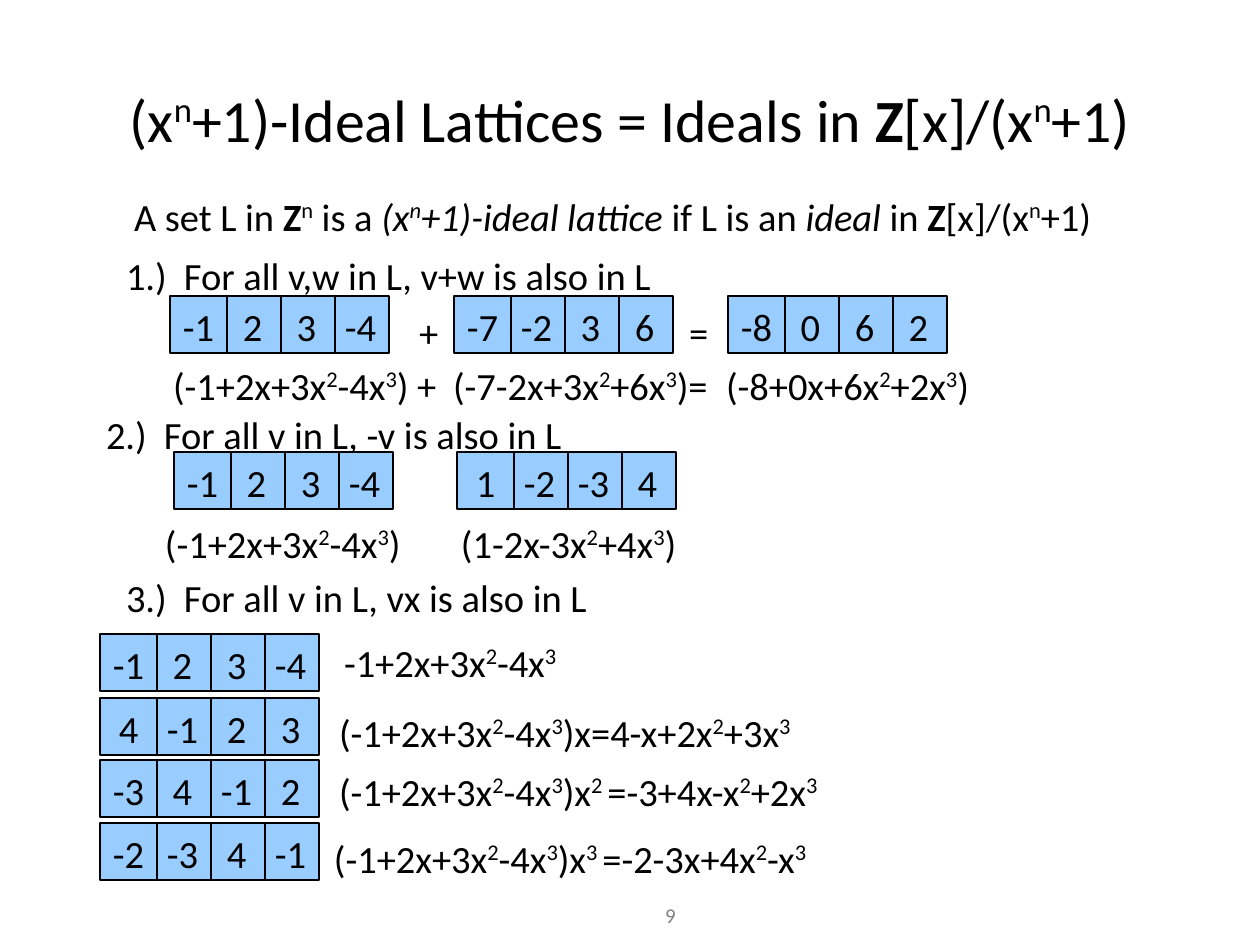
"""Builds a slide on ideal lattices as ideals in a polynomial ring."""
from dataclasses import dataclass

from lxml import etree
from pptx import Presentation
from pptx.dml.color import RGBColor
from pptx.enum.shapes import MSO_SHAPE
from pptx.enum.text import MSO_ANCHOR, PP_ALIGN
from pptx.oxml.ns import qn
from pptx.util import Emu, Pt

LEFT, CENTER = PP_ALIGN.LEFT, PP_ALIGN.CENTER
TOP, MIDDLE = MSO_ANCHOR.TOP, MSO_ANCHOR.MIDDLE
ROUNDED = MSO_SHAPE.ROUNDED_RECTANGLE
SCALE = 914400 / 126
BOLD, ITALIC, SUPER = "*", "_", "^"


def px(n):
    return Emu(round(n * SCALE))


@dataclass(frozen=True)
class Theme:
    font: str = "Calibri"
    ink: RGBColor = RGBColor(0, 0, 0)
    muted: RGBColor = RGBColor(0x80, 0x80, 0x80)
    cell: RGBColor = RGBColor(0x99, 0xCC, 0xFF)
    title: float = 34.2
    body: int = 22
    number: int = 12
    line: float = 0.75


class Deck:
    def __init__(self, theme, width, height):
        self.theme = theme
        self.prs = Presentation()
        self.prs.slide_width, self.prs.slide_height = px(width), px(height)
        self.slide = self.prs.slides.add_slide(self.prs.slide_layouts[6])

    def set_text(self, sp, text, size, color, align, anchor, tabs=()):
        tf = sp.text_frame
        tf.word_wrap = True
        tf.vertical_anchor = anchor
        tf.margin_left = tf.margin_right = px(11)
        tf.margin_top, tf.margin_bottom = px(8), px(5)
        p = tf.paragraphs[0]
        p.alignment = align
        if tabs:
            stops = etree.SubElement(p._p.get_or_add_pPr(), qn("a:tabLst"))
            for pos in tabs:
                etree.SubElement(stops, qn("a:tab"), pos=str(px(pos)), algn="l")
        p.font.name, p.font.size = self.theme.font, Pt(size)
        p.font.color.rgb = color
        self.add_runs(p, text)

    def add_runs(self, p, text):
        active, part = set(), ""
        for char in text + SUPER:
            if char not in (BOLD, ITALIC, SUPER):
                part += char
                continue
            if part:
                r = p.add_run()
                r.text = part
                if BOLD in active:
                    r.font.bold = True
                if ITALIC in active:
                    r.font.italic = True
                if SUPER in active:
                    r._r.get_or_add_rPr().set("baseline", "33000")
            part = ""
            active ^= {char}

    def text(self, x, y, w, h, text, size=None, color=None, align=LEFT,
             anchor=TOP, tabs=()):
        sp = self.slide.shapes.add_textbox(px(x), px(y), px(w), px(h))
        self.set_text(sp, text, size or self.theme.body, color or self.theme.ink,
                      align, anchor, tabs)

    def cell(self, x, y, side, value):
        t = self.theme
        sp = self.slide.shapes.add_shape(ROUNDED, px(x), px(y), px(side), px(side))
        sp.adjustments[0] = 0
        sp.shadow.inherit = False
        sp.fill.solid()
        sp.fill.fore_color.rgb = t.cell
        sp.line.color.rgb, sp.line.width = t.ink, Pt(t.line)
        self.set_text(sp, str(value), t.body, t.ink, CENTER, MIDDLE)

    def vector(self, x, y, values, pitch=54, side=57):
        for i, value in reversed(list(enumerate(values))):
            self.cell(x + i * pitch, y, side, value)


VECTORS = [
    (170, 296, (-1, 2, 3, -4)),
    (454, 296, (-7, -2, 3, 6)),
    (728, 296, (-8, 0, 6, 2)),
    (174, 452, (-1, 2, 3, -4)),
    (457, 452, (1, -2, -3, 4)),
    (100, 634, (-1, 2, 3, -4)),
    (100, 698, (4, -1, 2, 3)),
    (100, 760, (-3, 4, -1, 2)),
    (100, 823, (-2, -3, 4, -1)),
]
RULES = [
    (115, 244, "1.)\tFor all v,w in L, v+w is also in L"),
    (95, 403, "2.)\tFor all v in L, -v is also in L"),
    (115, 566, "3.)\tFor all v in L, vx is also in L"),
]
V = "(-1+2x+3x^2^-4x^3^)"
FORMULAS = [
    (162, 354, V + " +\t(-7-2x+3x^2^+6x^3^)=\t(-8+0x+6x^2^+2x^3^)", (280, 553)),
    (154, 512, V + "\t(1-2x-3x^2^+4x^3^)", (296,)),
    (333, 631, V.strip("()"), ()),
    (328, 701, V + "x=4-x+2x^2^+3x^3^", ()),
    (328, 760, V + "x^2 ^=-3+4x-x^2^+2x^3^", ()),
    (323, 827, V + "x^3 ^=-2-3x+4x^2^-x^3^", ()),
]


def main():
    theme = Theme()
    s = Deck(theme, 1260, 945)
    s.text(593, 895, 155, 50, "9", theme.number, theme.muted, CENTER)
    s.text(63, 38, 1134, 158, "(x^n^+1)-Ideal Lattices = Ideals in *Z*[x]/(x^n^+1)",
           theme.title, align=CENTER, anchor=MIDDLE)
    s.text(123, 185, 1000, 44, "A set L in *Z^*n^ is a _(x^n^+1)-ideal lattice _"
           "if L is an _ideal _in *Z*[x]/(x^n^+1)")
    for x, y, rule in RULES:
        s.text(x, y, 600, 43, rule, tabs=(58,))
    for x, y, values in VECTORS:
        s.vector(x, y, values)
    for x, y, formula, tabs in FORMULAS:
        s.text(x, y, 900, 43, formula, tabs=tabs)
    for x, sign in ((408, "+"), (678, "=")):
        s.text(x, 301, 57, 43, sign)
    s.prs.save("out.pptx")


if __name__ == "__main__":
    main()
